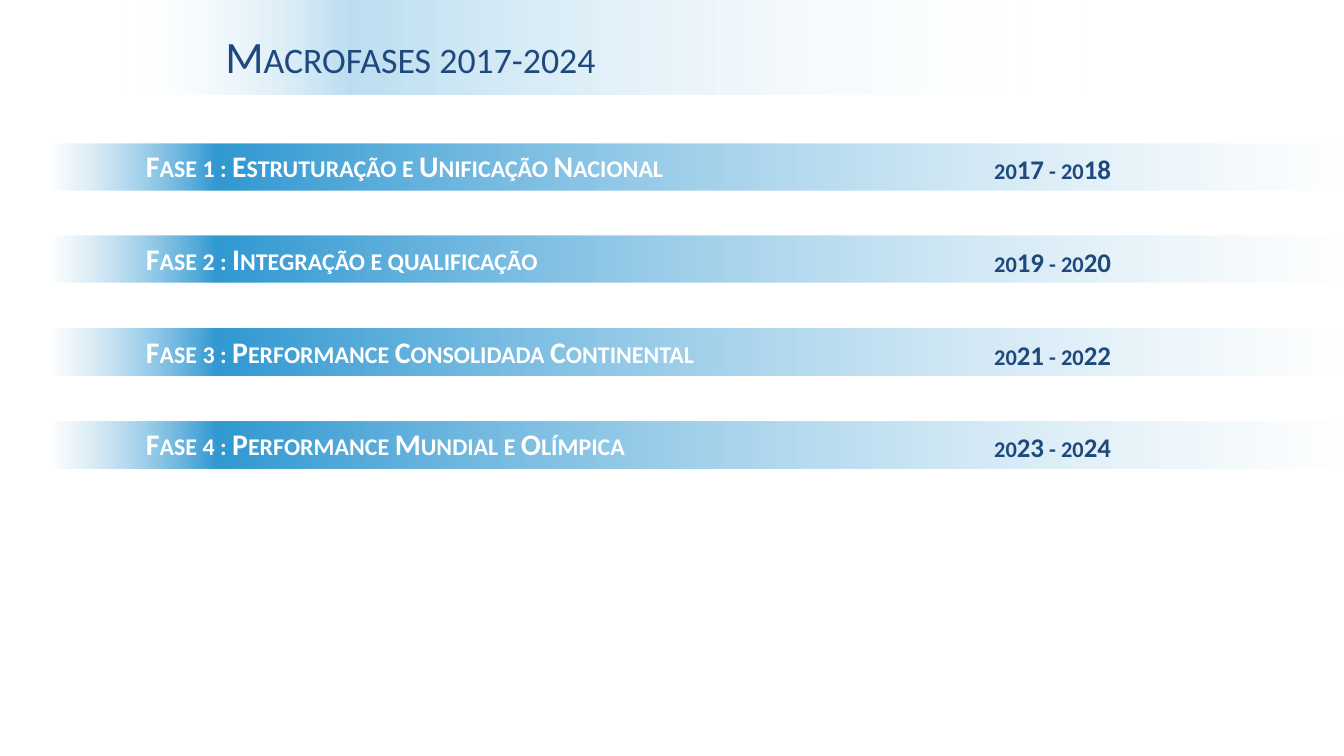
from lxml.etree import SubElement
from pptx import Presentation
from pptx.dml.color import RGBColor
from pptx.enum.shapes import MSO_SHAPE as SHAPE
from pptx.enum.text import MSO_AUTO_SIZE as AUTO
from pptx.oxml.ns import qn
from pptx.util import Cm, Pt

WHITE = RGBColor(0xFF, 0xFF, 0xFF)
BLUE = RGBColor(0x00, 0x81, 0xC8)
NAVY = RGBColor(0x1F, 0x49, 0x7D)


def add_band(shapes, left, top, width, height, stops):
    """Rectangle with a horizontal gradient; stops are (position %, colour, opacity %)."""
    sp = shapes.add_shape(SHAPE.RECTANGLE, Cm(left), Cm(top), Cm(width), Cm(height))
    sp.shadow.inherit = False
    sp.line.fill.background()
    sp.fill.gradient()
    sp.fill.gradient_angle = 0
    gs_list = sp._element.spPr.find(".//" + qn("a:gsLst"))
    for gs in list(gs_list):
        gs_list.remove(gs)
    for pos, color, opacity in stops:
        gs = SubElement(gs_list, qn("a:gs"), pos=str(pos * 1000))
        clr = SubElement(gs, qn("a:srgbClr"), val=str(color))
        SubElement(clr, qn("a:alpha"), val=str(opacity * 1000))


def add_text(shapes, left, top, width, height, runs, color, bold=True):
    """Small-caps text box; runs are (text, size in points)."""
    tf = shapes.add_textbox(Cm(left), Cm(top), Cm(width), Cm(height)).text_frame
    tf.word_wrap = True
    tf.auto_size = AUTO.SHAPE_TO_FIT_TEXT
    p = tf.paragraphs[0]
    p.font.name = "Calibri"
    p.font.bold = bold
    p.font.color.rgb = color
    for text, size in runs:
        r = p.add_run()
        r.text = text
        r.font.size = Pt(size)
        r._r.get_or_add_rPr().set("cap", "small")


prs = Presentation()
prs.slide_width, prs.slide_height = Cm(25.4), Cm(14.28)
s = prs.slides.add_slide(prs.slide_layouts[6])

# Title band
add_band(s.shapes, 0, 0, 25.4, 1.78, [(9, WHITE, 0), (26, BLUE, 26), (81, WHITE, 0)])
add_text(s.shapes, 4.01, 0.41, 13.41, 1.27, [("Macrofases 2017-2024", 24)], NAVY, bold=False)

# Phases: name, name box width, two-digit start and end years
phases = [
    ("Estruturação e Unificação Nacional", 10.57, 17, 18),
    ("Integração e qualificação", 8.15, 19, 20),
    ("Performance Consolidada Continental", 13.56, 21, 22),
    ("Performance Mundial e Olímpica", 9.86, 23, 24),
]
for i, (name, width, start, end) in enumerate(phases):
    top = 2.71 + 1.75 * i
    group = s.shapes.add_group_shape().shapes
    add_band(group, 0.94, top, 24.43, 0.88, [(0, WHITE, 48), (13, BLUE, 81), (100, WHITE, 39)])
    add_text(group, 2.51, top - 0.04, width, 0.94, [(f"Fase {i + 1} : {name}", 16)], WHITE)
    years = [("20", 15), (str(start), 18), (" - 20", 15), (str(end), 18)]
    add_text(group, 18.54, top - 0.07, 3.3, 1.02, years, NAVY)

prs.save("out.pptx")
